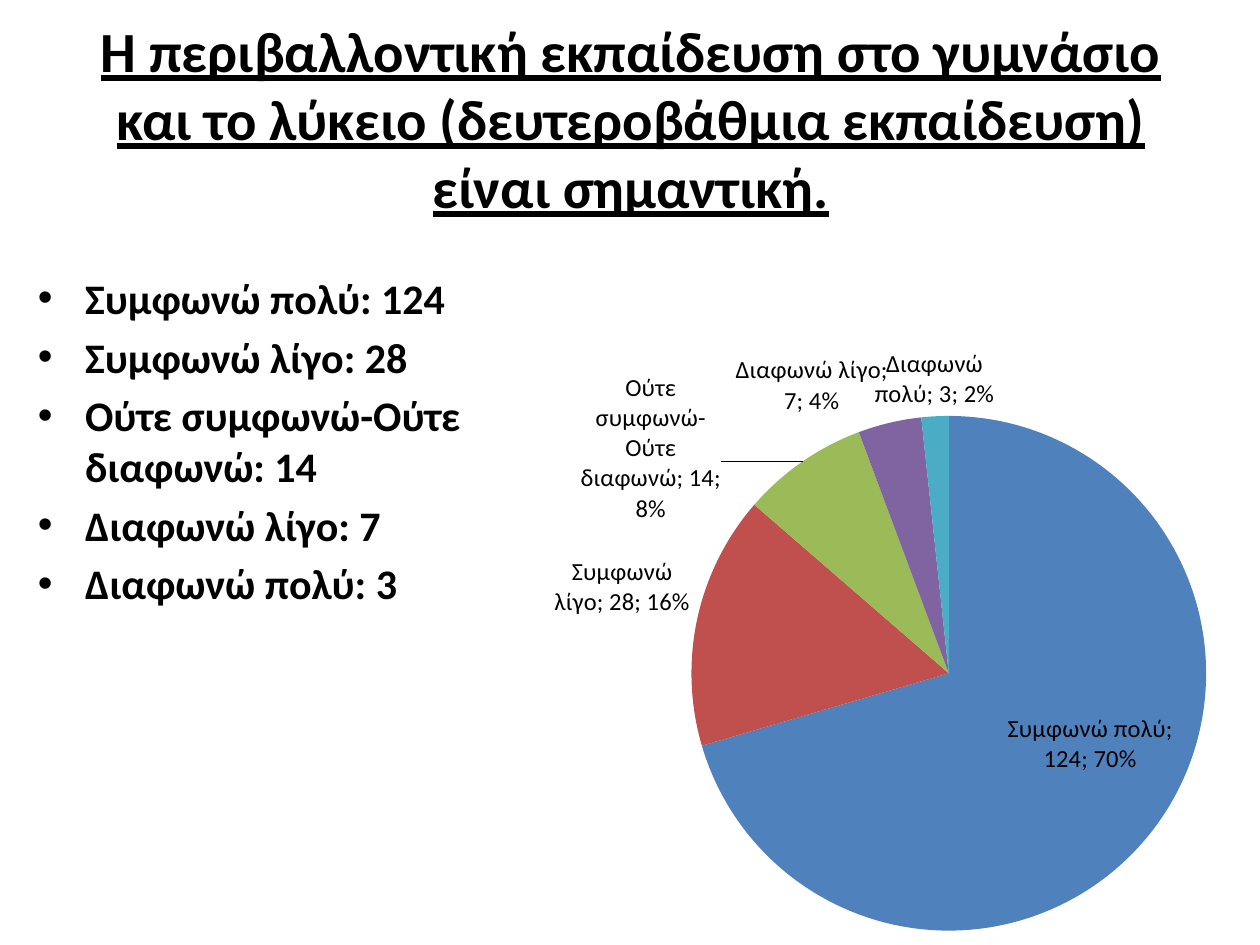
from pptx import Presentation
from pptx import util as u
from pptx.chart.data import CategoryChartData
from pptx.dml.color import RGBColor
from pptx.enum import chart as ch, text
from pptx.oxml import parse_xml
from pptx.oxml.ns import nsdecls

COLORS = {"text": "000000", "blue": "4F81BD", "red": "C0504D",
          "green": "9BBB59", "purple": "8064A2", "aqua": "4BACC6"}
TITLE = ("Η περιβαλλοντική εκπαίδευση στο γυμνάσιο και το λύκειο "
         "(δευτεροβάθμια εκπαίδευση) είναι σημαντική.")
ANSWERS = [("Συμφωνώ πολύ", 124, "blue"),
           ("Συμφωνώ λίγο", 28, "red"),
           ("Ούτε συμφωνώ-Ούτε διαφωνώ", 14, "green"),
           ("Διαφωνώ λίγο", 7, "purple"),
           ("Διαφωνώ πολύ", 3, "aqua")]
LABEL_SHIFTS = {0: (0.05, -0.01), 2: (-0.1, 0.1)}


def set_font(font, **values):
    for name, value in {"name": "Calibri", **values}.items():
        setattr(font, name, value)
    font.color.rgb = RGBColor.from_string(COLORS["text"])


def layout_xml(**values):
    items = "".join(f'<c:{k} val="{v}"/>' for k, v in values.items())
    return parse_xml(f'<c:layout {nsdecls("c")}><c:manualLayout>{items}'
                     '</c:manualLayout></c:layout>')


prs = Presentation()
prs.slide_width, prs.slide_height = u.Pt(720), u.Pt(540)
s = prs.slides.add_slide(prs.slide_layouts[1])
title, body = s.placeholders

boxes = [(title, (31, 0, 658.8, 134.6), [TITLE], {"size": u.Pt(32.4), "underline": True}),
         (body, (14.4, 152, 261.4, 277), [f"{name}: {n}" for name, n, _ in ANSWERS],
          {"size": u.Pt(24)})]
for sp, box, lines, fmt in boxes:
    sp.left, sp.top, sp.width, sp.height = [u.Pt(v) for v in box]
    tf = sp.text_frame
    tf.auto_size = text.MSO_AUTO_SIZE.NONE
    for i, line in enumerate(lines):
        p = tf.add_paragraph() if i else tf.paragraphs[0]
        r = p.add_run()
        r.text = line
        set_font(r.font, bold=True, **fmt)

data = CategoryChartData()
data.categories = [name for name, _, _ in ANSWERS]
data.add_series("Series 1", [n for _, n, _ in ANSWERS])
chart = s.shapes.add_chart(ch.XL_CHART_TYPE.PIE, u.Pt(281), u.Pt(152),
                           u.Pt(439), u.Pt(388), data).chart
chart.has_legend = chart.has_title = False
set_font(chart.font, size=u.Pt(10))
plot = chart.plots[0]
plot.vary_by_categories = True

area = chart.element.xpath("c:chart/c:plotArea")[0]
for old in area.xpath("c:layout"):
    area.remove(old)
area.insert(0, layout_xml(layoutTarget="inner", xMode="edge", yMode="edge",
                          x=0.26, y=0.22, w=0.67, h=0.76))

series = plot.series[0]
labels = series.data_labels
shown = {"show_value": True, "show_category_name": True, "show_percentage": True,
         "position": ch.XL_LABEL_POSITION.OUTSIDE_END}
for name, value in shown.items():
    setattr(labels, name, value)
set_font(labels.font, size=u.Pt(14))

for i, (_, _, color) in enumerate(ANSWERS):
    fill = series.points[i].format.fill
    fill.solid()
    fill.fore_color.rgb = RGBColor.from_string(COLORS[color])

for i in LABEL_SHIFTS:
    label = series.points[i].data_label
    set_font(label.font, size=u.Pt(14))
    label.position = ch.XL_LABEL_POSITION.OUTSIDE_END if i else ch.XL_LABEL_POSITION.CENTER

for idx in chart.element.xpath(".//c:dLbl/c:idx"):
    x, y = LABEL_SHIFTS[int(idx.get("val"))]
    idx.addnext(layout_xml(x=x, y=y))
for flag in chart.element.xpath(".//c:dLbl/c:showCatName | .//c:dLbl/c:showPercent"):
    flag.set("val", "1")
for flag in chart.element.xpath(".//c:ser//c:showBubbleSize"):
    flag.addnext(parse_xml(f'<c:separator {nsdecls("c")}>; </c:separator>'))

prs.save("out.pptx")
